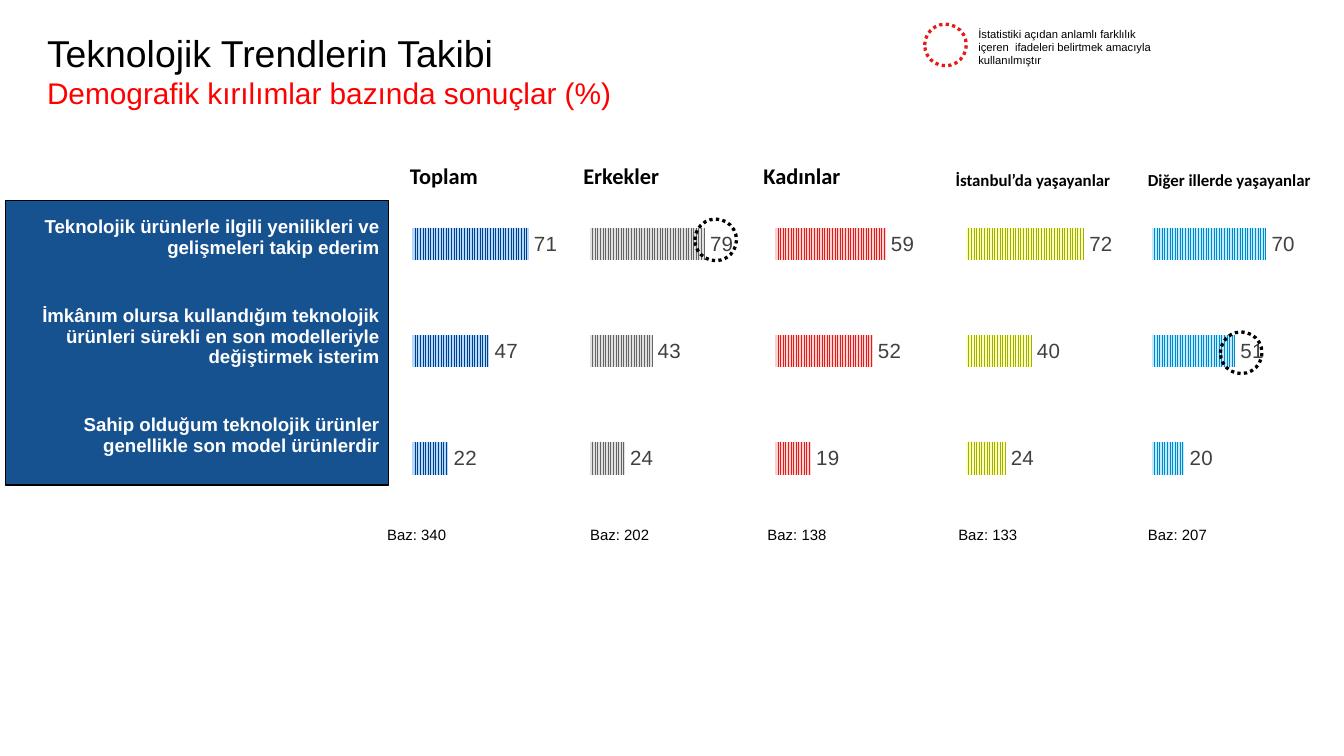
from lxml import etree
from pptx import Presentation
from pptx.chart.data import CategoryChartData
from pptx.dml.color import RGBColor
from pptx.enum.chart import XL_CHART_TYPE, XL_LABEL_POSITION
from pptx.enum.dml import MSO_LINE, MSO_PATTERN
from pptx.enum.shapes import MSO_SHAPE
from pptx.enum.text import MSO_ANCHOR, MSO_AUTO_SIZE, PP_ALIGN
from pptx.oxml.ns import qn
from pptx.util import Inches, Pt

BAR = XL_CHART_TYPE.BAR_CLUSTERED
OUTSIDE = XL_LABEL_POSITION.OUTSIDE_END
STRIPES = MSO_PATTERN.NARROW_VERTICAL
DOTS = MSO_LINE.ROUND_DOT
RECT, OVAL = MSO_SHAPE.RECTANGLE, MSO_SHAPE.OVAL
MIDDLE = MSO_ANCHOR.MIDDLE
LEFT, RIGHT = PP_ALIGN.LEFT, PP_ALIGN.RIGHT
GROW, FIXED = MSO_AUTO_SIZE.SHAPE_TO_FIT_TEXT, MSO_AUTO_SIZE.NONE
PLAIN_TABLE = "{2D5ABB26-0587-4C30-8999-92F81FD0307C}"

COLORS = {
    "black": "000000", "white": "FFFFFF", "red": "FF0000", "label": "404040",
    "navy": "004186", "navy_bg": "B4D8FF", "gray": "646464", "gray_bg": "E0E0E0",
    "rose": "E31B19", "rose_bg": "FAD1D1", "lime": "A1AF00", "lime_bg": "FAFFBC",
    "sky": "0087C8", "sky_bg": "C1EBFF",
}

ITEMS = [
    ("Teknolojik ürünlerle ilgili yenilikleri ve gelişmeleri takip ederim", 0.59),
    ("İmkânım olursa kullandığım teknolojik ürünleri sürekli en son "
     "modelleriyle değiştirmek isterim", 0.88),
    ("Sahip olduğum teknolojik ürünler genellikle son model ürünlerdir", 0.59),
]

# heading, heading box, heading size, chart left, values, axis top, color, base, base left
GROUPS = [
    ("Toplam", (3, 1.16, 1.77, 0.3), 12, 3, (71, 47, 22), 80, "navy", 340, 2.88),
    ("Erkekler", (4.29, 1.16, 1.02, 0.3), 12, 4.32, (79, 43, 24), 90, "gray", 202, 4.39),
    ("Kadınlar", (5.63, 1.16, 1.18, 0.3), 12, 5.7, (59, 52, 19), 70, "rose", 138, 5.71),
    ("İstanbul’da yaşayanlar", (7.06, 1.21, 1.29, 0.25), 9, 7.12, (72, 40, 24), 80,
     "lime", 133, 7.13),
    ("Diğer illerde yaşayanlar", (8.49, 1.21, 1.39, 0.25), 9, 8.5, (70, 51, 20), 80,
     "sky", 207, 8.54),
]
RINGS = [(5.17, 1.63, "black"), (6.88, 0.18, "rose"), (9.08, 2.47, "black")]


def rgb(name):
    return RGBColor.from_string(COLORS[name])


def style(font, size, color="black", face="Arial", bold=False):
    font.size, font.name, font.bold = Pt(size), face, bold
    font.color.rgb = rgb(color)


def inset(frame, gap):
    frame.margin_left = frame.margin_right = Inches(gap)
    frame.margin_top = frame.margin_bottom = Inches(gap)


def add_title(slide):
    title = slide.shapes.title
    title.left, title.top = Inches(0.35), Inches(0.21)
    title.width, title.height = Inches(7.01), Inches(0.63)
    frame = title.text_frame
    frame.text = "Teknolojik Trendlerin Takibi\vDemografik kırılımlar bazında sonuçlar (%)"
    frame.vertical_anchor, frame.auto_size = MIDDLE, FIXED
    inset(frame, 0)
    para = frame.paragraphs[0]
    para.alignment = LEFT
    for run, size, color in zip(para.runs, (20, 16), ("black", "red")):
        style(run.font, size, color)
    # The line break takes the size of the first line
    gap = next(title.element.iter(qn("a:br")))
    etree.SubElement(gap, qn("a:rPr"), sz="2000")


def add_text(slide, box, text, size, face="Arial", bold=False, gap=0, fit=FIXED):
    frame = slide.shapes.add_textbox(*map(Inches, box)).text_frame
    frame.text = text
    frame.word_wrap, frame.auto_size = True, fit
    inset(frame, gap)
    style(frame.paragraphs[0].runs[0].font, size, "black", face, bold)


def add_panel(slide):
    panel = slide.shapes.add_shape(RECT, *map(Inches, (0.04, 1.49, 2.85, 2.12)))
    panel.shadow.inherit = False
    panel.fill.solid()
    panel.fill.fore_color.rgb = rgb("navy")
    tint = next(panel.element.spPr.iter(qn("a:srgbClr")))
    etree.SubElement(tint, qn("a:alpha"), val="91000")
    panel.line.color.rgb = rgb("black")
    panel.line.width = Pt(0.75)


def add_items(slide):
    box = map(Inches, (0.05, 1.47, 2.78, 2.06))
    holder = slide.shapes.add_table(len(ITEMS), 1, *box)
    next(holder.element.iter(qn("a:tableStyleId"))).text = PLAIN_TABLE
    table = holder.table
    table.first_row = table.horz_banding = False
    for row, (text, height) in zip(table.rows, ITEMS):
        row.height = Inches(height)
        cell = row.cells[0]
        cell.fill.background()
        cell.text_frame.text = text
        cell.vertical_anchor = MIDDLE
        inset(cell, 0.01)
        cell.margin_bottom = 0
        para = cell.text_frame.paragraphs[0]
        para.alignment = RIGHT
        style(para.runs[0].font, 10, "white", bold=True)


def set_plot(chart):
    area = next(chart.element.iter(qn("c:plotArea")))
    for old in area.findall(qn("c:layout")):
        area.remove(old)
    layout = etree.Element(qn("c:layout"))
    manual = etree.SubElement(layout, qn("c:manualLayout"))
    for tag, val in (("layoutTarget", "inner"), ("xMode", "edge"), ("yMode", "edge"),
                     ("x", "0.053"), ("y", "0.019"), ("w", "0.75"), ("h", "0.945")):
        etree.SubElement(manual, qn("c:" + tag), val=val)
    area.insert(0, layout)


def add_bars(slide, left, values, top, color):
    data = CategoryChartData(number_format="0")
    data.categories = ["1", "2", "3"]
    data.add_series("Series 1", values)
    box = map(Inches, (left, 1.37, 1.3, 2.53))
    chart = slide.shapes.add_chart(BAR, *box, data).chart
    chart.has_legend = chart.has_title = False
    style(chart.font, 10)
    set_plot(chart)

    # Hidden axes
    cats, vals = chart.category_axis, chart.value_axis
    cats.reverse_order = True
    vals.minimum_scale, vals.maximum_scale = 0, top
    vals.has_major_gridlines = False
    cats.visible = vals.visible = False

    # Striped bars with values
    plot = chart.plots[0]
    plot.gap_width, plot.overlap = 227, -48
    plot.vary_by_categories = False
    series = plot.series[0]
    fill = series.format.fill
    fill.patterned()
    fill.pattern = STRIPES
    fill.fore_color.rgb, fill.back_color.rgb = rgb(color), rgb(color + "_bg")
    labels = series.data_labels
    labels.show_value = True
    labels.number_format, labels.number_format_is_linked = "#,##0", False
    labels.position = OUTSIDE
    style(labels.font, 11, "label")


def add_ring(slide, left, top, color):
    ring = slide.shapes.add_shape(OVAL, *map(Inches, (left, top, 0.31, 0.31)))
    ring.shadow.inherit = False
    ring.fill.background()
    ring.line.color.rgb = rgb(color)
    ring.line.width, ring.line.dash_style = Pt(1.75), DOTS


def main():
    deck = Presentation()
    # Widescreen, 16 to 9
    deck.slide_width, deck.slide_height = Inches(10), Inches(10 * 9 / 16)
    slide = deck.slides.add_slide(deck.slide_layouts[5])
    add_title(slide)

    # Statements
    add_panel(slide)
    add_items(slide)

    # One column per group
    for head, box, size, left, values, top, color, base, foot in GROUPS:
        add_text(slide, box, head, size, "Calibri", True, 0.05, GROW)
        add_bars(slide, left, values, top, color)
        add_text(slide, (foot, 3.91, 0.71, 0.17), f"Baz: {base}", 8)

    # Significance marks and their key
    for ring in RINGS:
        add_ring(slide, *ring)
    add_text(slide, (7.28, 0.2, 1.3, 0.29), "İstatistiki açıdan anlamlı farklılık "
             "içeren  ifadeleri belirtmek amacıyla kullanılmıştır", 6)
    deck.save("out.pptx")


if __name__ == "__main__":
    main()
